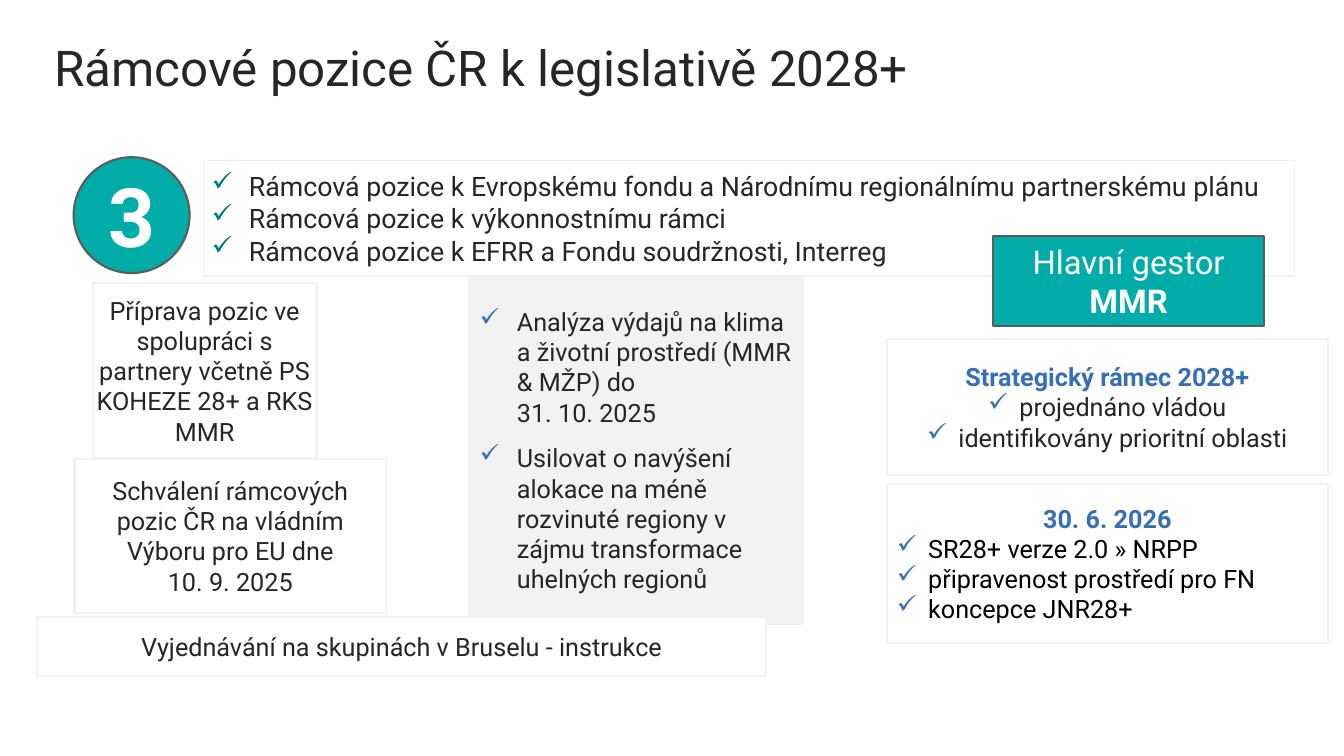
"""Build the slide on the Czech framework positions for legislation 2028+."""
from dataclasses import dataclass

from lxml import etree
from pptx import Presentation
from pptx import util as u
from pptx.dml import color
from pptx.enum import shapes, text
from pptx.oxml import ns

WIDTH, HEIGHT = u.Inches(13.33), u.Inches(7.5)
FONT = "Roboto"
COLORS = {
    "white": "FFFFFF", "black": "000000", "ink": "262626", "pale": "F2F2F2",
    "teal": "00ACA8", "dark_teal": "008080", "blue": "376FB7", "edge": "5C5C5C",
}
RECT, OVAL = shapes.MSO_SHAPE.RECTANGLE, shapes.MSO_SHAPE.OVAL
LEFT, CENTER = text.PP_ALIGN.LEFT, text.PP_ALIGN.CENTER
NONE = (0, 0, 0, 0)


@dataclass(frozen=True)
class Para:
    """One paragraph with its format."""
    text: str
    size: float = 18
    color: str = "ink"
    bold: bool = False
    align: text.PP_ALIGN = CENTER
    check: str = ""
    indent: float = 0
    before: float = 0


@dataclass(frozen=True)
class Box:
    """A filled shape; area is left, top, width, height in percent of the slide."""
    area: tuple[float, float, float, float]
    paras: list[Para]
    shape: shapes.MSO_SHAPE = RECT
    fill: str = "white"
    line: str = "pale"
    weight: float = 1.5
    insets: tuple[float, float, float, float] = (0.1, 0.05, 0.1, 0.05)
    wrap: bool = True


def rgb(name: str) -> color.RGBColor:
    """Return a named colour."""
    return color.RGBColor.from_string(COLORS[name])


def place(area: tuple[float, float, float, float]) -> list[int]:
    """Turn percent shares of the slide into lengths."""
    return [round(share * full / 100) for share, full in zip(area, (WIDTH, HEIGHT) * 2)]


def add_check(p, name: str) -> None:
    """Give a paragraph a coloured check mark as its bullet."""
    pPr = p._p.get_or_add_pPr()
    clr = etree.SubElement(pPr, ns.qn("a:buClr"))
    etree.SubElement(clr, ns.qn("a:srgbClr"), val=COLORS[name])
    etree.SubElement(pPr, ns.qn("a:buChar"), char="✓")


def write(p, content: str, *, size: float, color: str, bold: bool = False,
          align: text.PP_ALIGN = LEFT, check: str = "", indent: float = 0,
          before: float = 0) -> None:
    """Write formatted text into a paragraph."""
    p.alignment = align
    pPr = p._p.get_or_add_pPr()
    pPr.set("marL", str(u.Inches(indent)))
    pPr.set("indent", str(-u.Inches(indent) if check else 0))
    if before:
        p.space_before = u.Pt(before)
    if check:
        add_check(p, check)
    for i, part in enumerate(content.split("\n")):
        if i:
            p.add_line_break()
        r = p.add_run()
        r.text = part
        r.font.name, r.font.size, r.font.bold = FONT, u.Pt(size), bold
        r.font.color.rgb = rgb(color)


def set_frame(tf, insets: tuple[float, float, float, float], wrap: bool) -> None:
    """Set margins, anchor and wrapping of a text frame."""
    tf.margin_left, tf.margin_top, tf.margin_right, tf.margin_bottom = map(u.Inches, insets)
    tf.vertical_anchor = text.MSO_ANCHOR.MIDDLE
    tf.auto_size = text.MSO_AUTO_SIZE.NONE
    tf.word_wrap = wrap


def add_title(s, content: str) -> None:
    """Place and fill the title."""
    sp = s.shapes.title
    sp.left, sp.top, sp.width, sp.height = place((1.2, 0, 97.65, 17.73))
    set_frame(sp.text_frame, NONE, True)
    write(sp.text_frame.paragraphs[0], content, size=35.2, color="ink", indent=0.38)


def add_box(s, box: Box) -> None:
    """Draw one box with its paragraphs."""
    sp = s.shapes.add_shape(box.shape, *place(box.area))
    sp.shadow.inherit = False
    sp.fill.solid()
    sp.fill.fore_color.rgb = rgb(box.fill)
    sp.line.color.rgb = rgb(box.line)
    sp.line.width = u.Pt(box.weight)
    tf = sp.text_frame
    set_frame(tf, box.insets, box.wrap)
    for i, para in enumerate(box.paras):
        p = tf.add_paragraph() if i else tf.paragraphs[0]
        write(p, para.text, size=para.size, color=para.color, bold=para.bold,
              align=para.align, check=para.check, indent=para.indent, before=para.before)


def checks(*lines: str, size: float = 18, color: str = "ink", mark: str = "blue",
           align: text.PP_ALIGN = LEFT, indent: float = 0.31, gap: float = 0) -> list[Para]:
    """Make a list of checked paragraphs."""
    return [Para(line, size, color, align=align, check=mark, indent=indent,
                 before=gap if i else 0) for i, line in enumerate(lines)]


BOXES = [
    Box((15.15, 21.2, 81.15, 15.33), checks(
        "Rámcová pozice k Evropskému fondu a Národnímu regionálnímu partnerskému plánu",
        "Rámcová pozice k výkonnostnímu rámci",
        "Rámcová pozice k EFRR a Fondu soudržnosti, Interreg",
        size=19.1, mark="dark_teal", indent=0.37), weight=1, insets=(0.08, 0, 0, 0)),
    Box((5.48, 20.8, 8.63, 15.33), [Para("3", 58.6, "white", True)],
        OVAL, "teal", "edge", insets=NONE, wrap=False),
    Box((6.9, 37.47, 16.65, 23.07), [Para(
        "Příprava pozic ve spolupráci s partnery včetně PS KOHEZE 28+ a RKS MMR")], insets=NONE),
    Box((5.55, 60.67, 23.18, 20.4), [
        Para("Schválení rámcových pozic ČR na vládním Výboru pro EU dne"), Para("10. 9. 2025")]),
    Box((73.88, 31.2, 20.18, 11.87), [
        Para("Hlavní gestor", 23.4, "white"), Para("MMR", 23.4, "white", True)],
        fill="teal", line="edge"),
    Box((34.95, 36.53, 24.75, 46), checks(
        "Analýza výdajů na klima a životní prostředí (MMR & MŽP) do\n31. 10. 2025",
        "Usilovat o navýšení alokace na méně rozvinuté regiony v zájmu transformace "
        "uhelných regionů", indent=0.37, gap=11), fill="pale", weight=2),
    Box((66, 44.8, 32.78, 18), [
        Para("Strategický rámec 2028+", color="blue", bold=True),
        *checks("projednáno vládou", "identifikovány prioritní oblasti", align=CENTER)]),
    Box((66, 64, 32.78, 21.07), [
        Para("30. 6. 2026", color="blue", bold=True),
        *checks("SR28+ verze 2.0 » NRPP", "připravenost prostředí pro FN", "koncepce JNR28+",
                color="black")]),
    Box((2.78, 81.6, 54.23, 7.87), [Para("Vyjednávání na skupinách v Bruselu - instrukce")]),
]


def main() -> None:
    """Build and save the presentation."""
    prs = Presentation()
    prs.slide_width, prs.slide_height = WIDTH, HEIGHT
    s = prs.slides.add_slide(prs.slide_layouts[5])
    add_title(s, "Rámcové pozice ČR k legislativě 2028+")
    for box in BOXES:
        add_box(s, box)
    prs.save("out.pptx")


if __name__ == "__main__":
    main()
